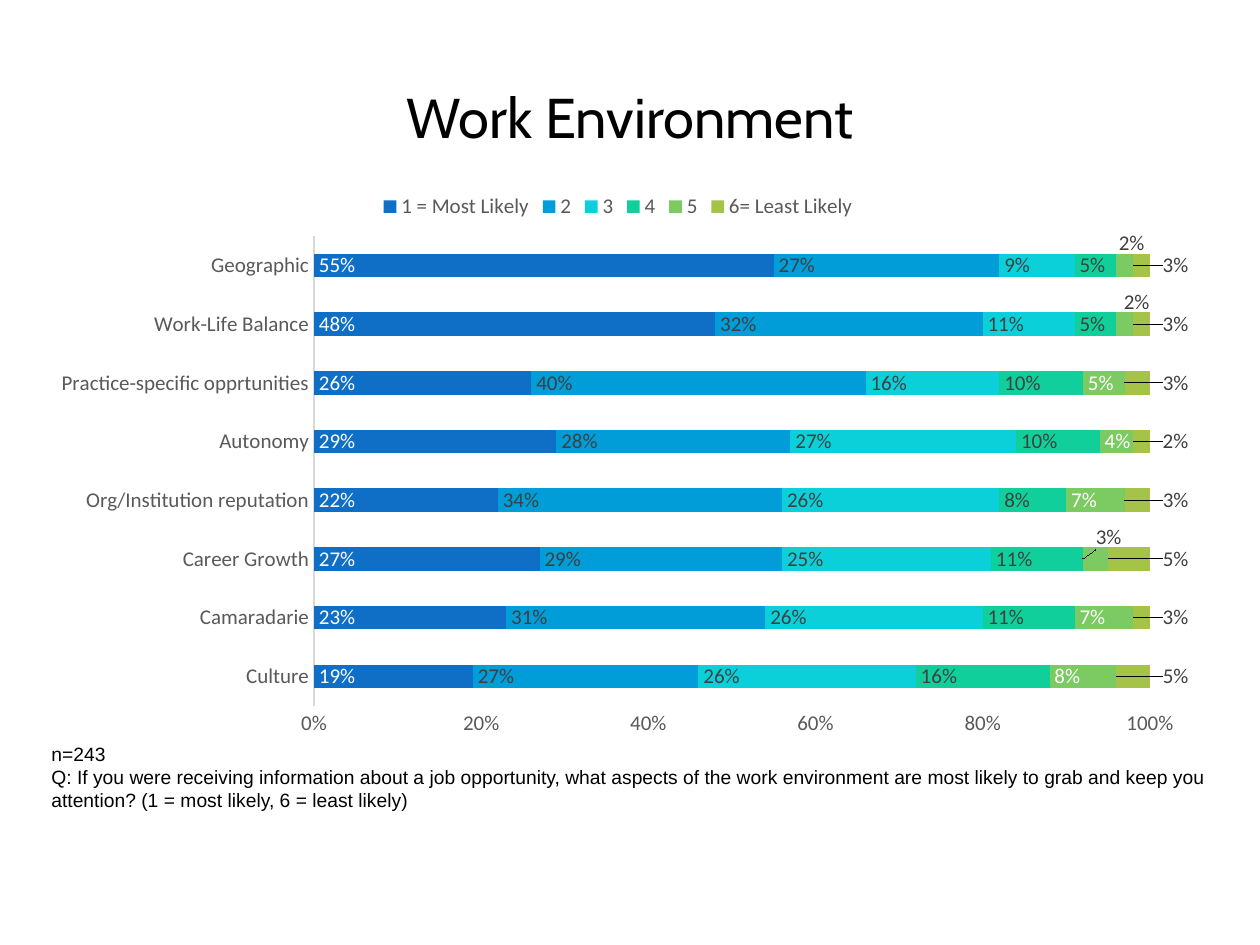
from lxml import etree
from pptx import Presentation
from pptx import util as u
from pptx.chart.data import CategoryChartData
from pptx.dml.color import RGBColor
from pptx.enum import chart as charts, text
from pptx.oxml.ns import qn

# Content
TITLE = "Work Environment"
NOTES = [
    "n=243",
    "Q: If you were receiving information about a job opportunity, what aspects of the work "
    "environment are most likely to grab and keep you attention? (1 = most likely, 6 = least likely)",
]
SERIES = ["1 = Most Likely", "2", "3", "4", "5", "6= Least Likely"]
RATINGS = [  # category, then the share of each rating, from bottom to top
    ("Culture", [0.19, 0.27, 0.26, 0.16, 0.08, 0.05]),
    ("Camaradarie", [0.23, 0.31, 0.26, 0.11, 0.07, 0.03]),
    ("Career Growth", [0.27, 0.29, 0.25, 0.11, 0.03, 0.05]),
    ("Org/Institution reputation", [0.22, 0.34, 0.26, 0.08, 0.07, 0.03]),
    ("Autonomy", [0.29, 0.28, 0.27, 0.10, 0.04, 0.02]),
    ("Practice-specific opprtunities", [0.26, 0.40, 0.16, 0.10, 0.05, 0.03]),
    ("Work-Life Balance", [0.48, 0.32, 0.11, 0.05, 0.02, 0.03]),
    ("Geographic", [0.55, 0.27, 0.09, 0.05, 0.02, 0.03]),
]
RAISED_LABELS = {"Career Growth": 1096, "Work-Life Balance": 1124, "Geographic": 1119}  # left, px

COLORS = {
    "black": "000000", "white": "FFFFFF", "axis": "595959", "label": "404040", "line": "D9D9D9",
    "series": ["0F6FC6", "009DD9", "0BD0D9", "10CF9B", "7CCA62", "A5C249"],
}

# Geometry in px
PX = u.Inches(1) / 126
SLIDE = (1260, 945)
TITLE_BOX = (63, 38, 1134, 157)
CHART_BOX = (39, 180, 1158, 567)
PLOT_BOX = (314, 236, 836, 470)
NOTE_BOX = (39, 736, 1232, 83)
LABEL_INSET, OUTER_LABEL_LEFT, LABEL_RISE = 5, 1163, -22


def emu(*lengths):
    return [round(length * PX) for length in lengths]


def style(font, size=12, color="axis", name="Calibri"):
    font.size, font.name, font.bold = u.Pt(size), name, False
    font.color.rgb = RGBColor.from_string(COLORS[color])


def write(shape, paragraphs, align=text.PP_ALIGN.LEFT, anchor=text.MSO_ANCHOR.TOP, **font):
    frame = shape.text_frame
    frame.word_wrap, frame.vertical_anchor = True, anchor
    frame.text = "\n".join(paragraphs)
    for paragraph in frame.paragraphs:
        paragraph.alignment = align
        for run in paragraph.runs:
            style(run.font, **font)


def manual_layout(**values):
    layout = etree.Element(qn("c:layout"))
    manual = etree.SubElement(layout, qn("c:manualLayout"))
    for tag, value in values.items():
        etree.SubElement(manual, qn(f"c:{tag}")).set("val", str(value))
    return layout


def format_labels(labels, color):
    style(labels.font, color=color)
    labels.position = charts.XL_LABEL_POSITION.INSIDE_BASE


def point_label(series, index, color, dx=0, dy=0):
    """Format one label and shift it by dx, dy px from its place inside the bar."""
    label = series.points[index].data_label
    format_labels(label, color)
    element = series.data_labels._element.find(f"{qn('c:dLbl')}[{index + 1}]")
    number_format = etree.Element(qn("c:numFmt"), formatCode="0%", sourceLinked="0")
    element.find(qn("c:txPr")).addprevious(number_format)
    if dx or dy:
        shift = manual_layout(x=round(dx / CHART_BOX[2], 4), y=round(dy / CHART_BOX[3], 4))
        element.find(qn("c:idx")).addnext(shift)


presentation = Presentation()
presentation.slide_width, presentation.slide_height = emu(*SLIDE)
slide = presentation.slides.add_slide(presentation.slide_layouts[5])

# Title
title = slide.shapes.title
title.left, title.top, title.width, title.height = emu(*TITLE_BOX)
write(title, [TITLE], text.PP_ALIGN.CENTER, text.MSO_ANCHOR.MIDDLE, size=32, color="black", name="Cabin")

# Chart
data = CategoryChartData(number_format="0%")
data.categories = [category for category, _ in RATINGS]
for number, name in enumerate(SERIES):
    data.add_series(name, [shares[number] for _, shares in RATINGS])
chart = slide.shapes.add_chart(charts.XL_CHART_TYPE.BAR_STACKED, *emu(*CHART_BOX), data).chart
style(chart.font, size=10, color="black")
chart.has_title = False
chart.has_legend = True
chart.legend.position = charts.XL_LEGEND_POSITION.TOP
chart.legend.include_in_layout = False
style(chart.legend.font)

# Plot area
plot_area = chart._chartSpace.chart.plotArea
for old_layout in plot_area.findall(qn("c:layout")):
    plot_area.remove(old_layout)
plot_area.insert(0, manual_layout(
    layoutTarget="inner", xMode="edge", yMode="edge",
    x=round((PLOT_BOX[0] - CHART_BOX[0]) / CHART_BOX[2], 4),
    y=round((PLOT_BOX[1] - CHART_BOX[1]) / CHART_BOX[3], 4),
    w=round(PLOT_BOX[2] / CHART_BOX[2], 4), h=round(PLOT_BOX[3] / CHART_BOX[3], 4)))
plot = chart.plots[0]
plot.gap_width, plot.overlap, plot.vary_by_categories = 150, 100, False

# Axes
for axis in (chart.category_axis, chart.value_axis):
    axis.has_major_gridlines = False
    axis.major_tick_mark = axis.minor_tick_mark = charts.XL_TICK_MARK.NONE
    style(axis.tick_labels.font)
category_line = chart.category_axis.format.line
category_line.color.rgb = RGBColor.from_string(COLORS["line"])
category_line.width = u.Pt(0.75)
value_axis = chart.value_axis
value_axis.format.line.fill.background()
value_axis.minimum_scale, value_axis.maximum_scale, value_axis.major_unit = 0, 1, 0.2
value_axis.tick_labels.number_format = "0%"
value_axis.tick_labels.number_format_is_linked = False

# Bars and their labels
for number, (series, color) in enumerate(zip(plot.series, COLORS["series"])):
    series.format.fill.solid()
    series.format.fill.fore_color.rgb = RGBColor.from_string(color)
    series.invert_if_negative = False
    labels = series.data_labels
    labels.show_value = True
    labels.number_format, labels.number_format_is_linked = "0%", False
    format_labels(labels, "label" if number else "white")
    if number < 4:
        continue
    for index, (category, shares) in enumerate(RATINGS):
        inside_left = PLOT_BOX[0] + PLOT_BOX[2] * sum(shares[:number]) + LABEL_INSET
        if number == 5:
            point_label(series, index, "label", OUTER_LABEL_LEFT - inside_left)
        elif category in RAISED_LABELS:
            point_label(series, index, "label", RAISED_LABELS[category] - inside_left, LABEL_RISE)
        else:
            point_label(series, index, "white")

# Sample size and question
write(slide.shapes.add_textbox(*emu(*NOTE_BOX)), NOTES, size=11, color="black", name="Arial")

presentation.save("out.pptx")
